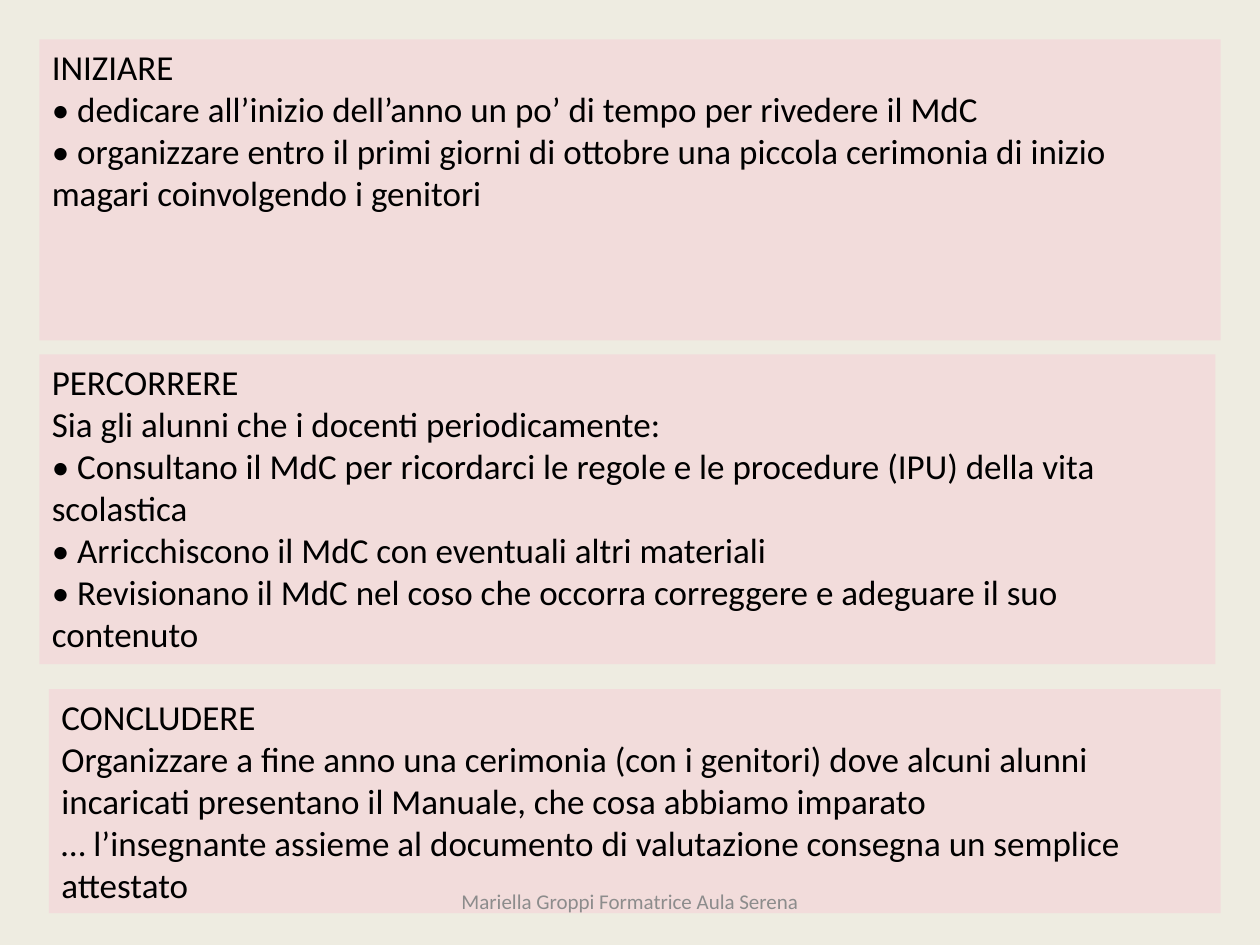
from pptx import Presentation
from pptx.dml.color import RGBColor
from pptx.enum import text
from pptx.util import Pt

PANELS = [
    ((22.5, 22.5, 675, 172), [
        "INIZIARE",
        "• dedicare all’inizio dell’anno un po’ di tempo per rivedere il MdC",
        "• organizzare entro il primi giorni di ottobre una piccola cerimonia di inizio "
        "magari coinvolgendo i genitori",
    ]),
    ((22.5, 202.5, 672, 177), [
        "PERCORRERE",
        "Sia gli alunni che i docenti periodicamente:",
        "• Consultano il MdC per ricordarci le regole e le procedure (IPU) della vita scolastica",
        "• Arricchiscono il MdC con eventuali altri materiali",
        "• Revisionano il MdC nel coso che occorra correggere e adeguare il suo contenuto",
    ]),
    ((28, 393.75, 669.5, 128), [
        "CONCLUDERE",
        "Organizzare a fine anno una cerimonia (con i genitori) dove alcuni alunni "
        "incaricati presentano il Manuale, che cosa abbiamo imparato",
        "… l’insegnante assieme al documento di valutazione consegna un semplice attestato",
    ]),
]
PANEL_FONT = {"name": "Calibri", "size": Pt(20)}
FOOTER_FONT = {"name": "Calibri", "size": Pt(12)}


def paint(fmt, color):
    """Give a fill a solid hex colour."""
    fmt.solid()
    fmt.fore_color.rgb = RGBColor.from_string(color)


def add_text(s, box, lines, font, color, align, anchor):
    """Add a wrapping text box with one paragraph per line."""
    sp = s.shapes.add_textbox(*map(Pt, box))
    tf = sp.text_frame
    frame = {"word_wrap": True, "auto_size": text.MSO_AUTO_SIZE.NONE, "vertical_anchor": anchor}
    for key, value in frame.items():
        setattr(tf, key, value)
    for i, line in enumerate(lines):
        p = tf.paragraphs[0] if i == 0 else tf.add_paragraph()
        p.alignment = align
        r = p.add_run()
        r.text = line
        for key, value in font.items():
            setattr(r.font, key, value)
        paint(r.font.fill, color)
    return sp


def add_panel(s, box, lines):
    """Add a pink panel with a heading and its points."""
    sp = add_text(s, box, lines, PANEL_FONT, "000000", text.PP_ALIGN.LEFT, text.MSO_ANCHOR.TOP)
    paint(sp.fill, "F2DCDB")


def add_footer(s, box, line):
    """Add the centred grey footer."""
    add_text(s, box, [line], FOOTER_FONT, "8C8C8C", text.PP_ALIGN.CENTER, text.MSO_ANCHOR.MIDDLE)


def main():
    """Build and save the slide."""
    prs = Presentation()
    prs.slide_width, prs.slide_height = Pt(720), Pt(540)
    s = prs.slides.add_slide(prs.slide_layouts[6])
    paint(s.background.fill, "EEECE1")
    for box, lines in PANELS:
        add_panel(s, box, lines)
    add_footer(s, (246, 500.5, 228, 28.75), "Mariella Groppi Formatrice Aula Serena")
    prs.save("out.pptx")


if __name__ == "__main__":
    main()
